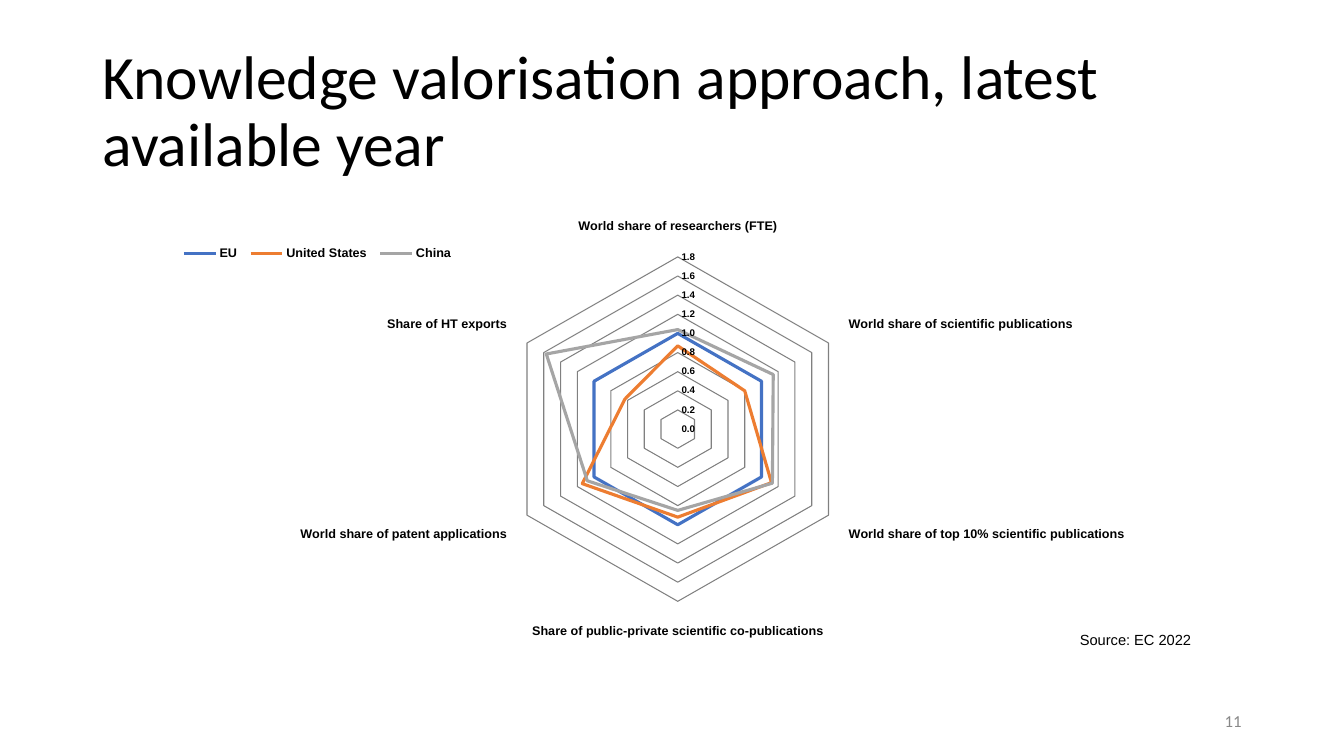
"""Build the knowledge valorisation slide with a radar chart of three economies."""
import lxml.etree
import pptx
import pptx.chart.data
import pptx.dml.color
import pptx.enum.chart
import pptx.enum.text
import pptx.oxml.ns
import pptx.util

Cm, Pt = pptx.util.Cm, pptx.util.Pt
RGBColor = pptx.dml.color.RGBColor
Align = pptx.enum.text.PP_ALIGN
Anchor = pptx.enum.text.MSO_ANCHOR
TickMark = pptx.enum.chart.XL_TICK_MARK
qn = pptx.oxml.ns.qn

BLACK = RGBColor(0x00, 0x00, 0x00)
GREY = RGBColor(0x88, 0x88, 0x88)
GRID = RGBColor(0x80, 0x80, 0x80)
AXIS = RGBColor(0xD9, 0xD9, 0xD9)
BLUE = RGBColor(0x44, 0x72, 0xC4)
ORANGE = RGBColor(0xED, 0x7D, 0x31)
SILVER = RGBColor(0xA5, 0xA5, 0xA5)

INDICATORS = [
    "World share of researchers (FTE)",
    "World share of scientific publications",
    "World share of top 10% scientific publications",
    "Share of public-private scientific co-publications",
    "World share of patent applications",
    "Share of HT exports",
]
ECONOMIES = [
    ("EU", BLUE, (1, 1, 1, 1, 1, 1)),
    ("United States", ORANGE, (0.87, 0.8, 1.12, 0.92, 1.14, 0.63)),
    ("China", SILVER, (1.04, 1.14, 1.13, 0.85, 1.08, 1.57)),
]


def apply(target, formats):
    for name, value in formats.items():
        setattr(target, name, value)


def set_font(font, color=BLACK, **formats):
    apply(font, formats)
    font.color.rgb = color


def set_line(line, color, width):
    line.color.rgb = color
    line.width = Pt(width)


def set_layout(layout, target, **fractions):
    manual = lxml.etree.SubElement(layout, qn("c:manualLayout"))
    settings = {"layoutTarget": target, "xMode": "edge", "yMode": "edge", **fractions}
    for name, value in settings.items():
        if value is not None:
            lxml.etree.SubElement(manual, qn(f"c:{name}")).set("val", str(value))


class SlideBuilder:
    """Hold the fonts and the current slide, and add its elements."""

    heading_font = "Calibri"
    text_font = "Arial"

    def __init__(self, presentation):
        self.slide = presentation.slides.add_slide(presentation.slide_layouts[5])

    def place(self, shape, box):
        apply(shape, dict(zip(("left", "top", "width", "height"), map(Cm, box))))

    def fill_frame(self, frame, text, align, anchor, **font):
        apply(frame, {"word_wrap": True, "vertical_anchor": anchor, "text": text})
        paragraph = frame.paragraphs[0]
        paragraph.alignment = align
        set_font(paragraph.runs[0].font, **font)
        return paragraph

    def title(self, text, box):
        heading = self.slide.shapes.title
        self.place(heading, box)
        paragraph = self.fill_frame(heading.text_frame, text, Align.LEFT, Anchor.MIDDLE,
                                    name=self.heading_font, size=Pt(44))
        paragraph.line_spacing = 0.9
        heading.text_frame.auto_size = pptx.enum.text.MSO_AUTO_SIZE.NONE

    def text(self, text, box, anchor, **font):
        note = self.slide.shapes.add_textbox(*map(Cm, box))
        self.fill_frame(note.text_frame, text, Align.RIGHT, anchor, **font)

    def radar(self, indicators, economies, box):
        data = pptx.chart.data.CategoryChartData()
        data.categories = indicators
        for name, _, shares in economies:
            data.add_series(name, shares)
        chart = self.slide.shapes.add_chart(
            pptx.enum.chart.XL_CHART_TYPE.RADAR, *map(Cm, box), data).chart
        apply(chart, {"has_title": False, "has_legend": True})
        set_font(chart.font, name=self.text_font, size=Pt(10))
        plot = chart.plots[0]
        plot.vary_by_categories = False
        for series, (_, color, _) in zip(plot.series, economies):
            set_line(series.format.line, color, 2.25)
            series.marker.style = pptx.enum.chart.XL_MARKER_STYLE.NONE
        self.radar_axes(chart)
        self.legend(chart.legend)
        area = chart._chartSpace.chart.plotArea
        layout = area.find(qn("c:layout"))
        if layout is None:
            layout = lxml.etree.Element(qn("c:layout"))
            area.insert(0, layout)
        set_layout(layout, "inner", x=0.341, y=0.092, w=0.329, h=0.83)

    def radar_axes(self, chart):
        spokes, scale = chart.category_axis, chart.value_axis
        ticks = {"major_tick_mark": TickMark.NONE, "minor_tick_mark": TickMark.NONE}
        for axis, size in ((spokes, 9), (scale, 7)):
            apply(axis, ticks)
            set_font(axis.tick_labels.font, name=self.text_font, size=Pt(size), bold=True)
        spokes.has_major_gridlines = False
        set_line(spokes.format.line, AXIS, 0.75)
        apply(scale, {"minimum_scale": 0, "maximum_scale": 1.8, "major_unit": 0.2,
                      "has_major_gridlines": True})
        apply(scale.tick_labels, {"number_format": "0.0", "number_format_is_linked": False})
        set_line(scale.major_gridlines.format.line, GRID, 0.75)
        scale.format.line.fill.background()

    def legend(self, legend):
        apply(legend, {"position": pptx.enum.chart.XL_LEGEND_POSITION.TOP,
                       "include_in_layout": False})
        set_font(legend.font, name=self.text_font, size=Pt(9), bold=True)
        element = legend._element
        for layout in element.findall(qn("c:layout")):
            element.remove(layout)
        layout = lxml.etree.Element(qn("c:layout"))
        element.find(qn("c:legendPos")).addnext(layout)
        set_layout(layout, None, x=0.03, y=0.05, w=0.27, h=0.07)


def main():
    presentation = pptx.Presentation()
    apply(presentation, {"slide_width": Cm(33.87), "slide_height": Cm(19.05)})
    builder = SlideBuilder(presentation)
    builder.title("Knowledge valorisation approach, latest available year",
                  (2.33, 1.01, 29.21, 3.68))
    builder.text("11", (23.92, 17.66, 7.62, 1.01), Anchor.MIDDLE,
                 name=builder.heading_font, size=Pt(12), color=GREY)
    builder.radar(INDICATORS, ECONOMIES, (3.6, 5.5, 26.67, 10.6))
    builder.text("Source: EC 2022", (25.8, 15.77, 4.47, 0.73), Anchor.TOP,
                 name=builder.text_font, size=Pt(10.5))
    presentation.save("out.pptx")


if __name__ == "__main__":
    main()
